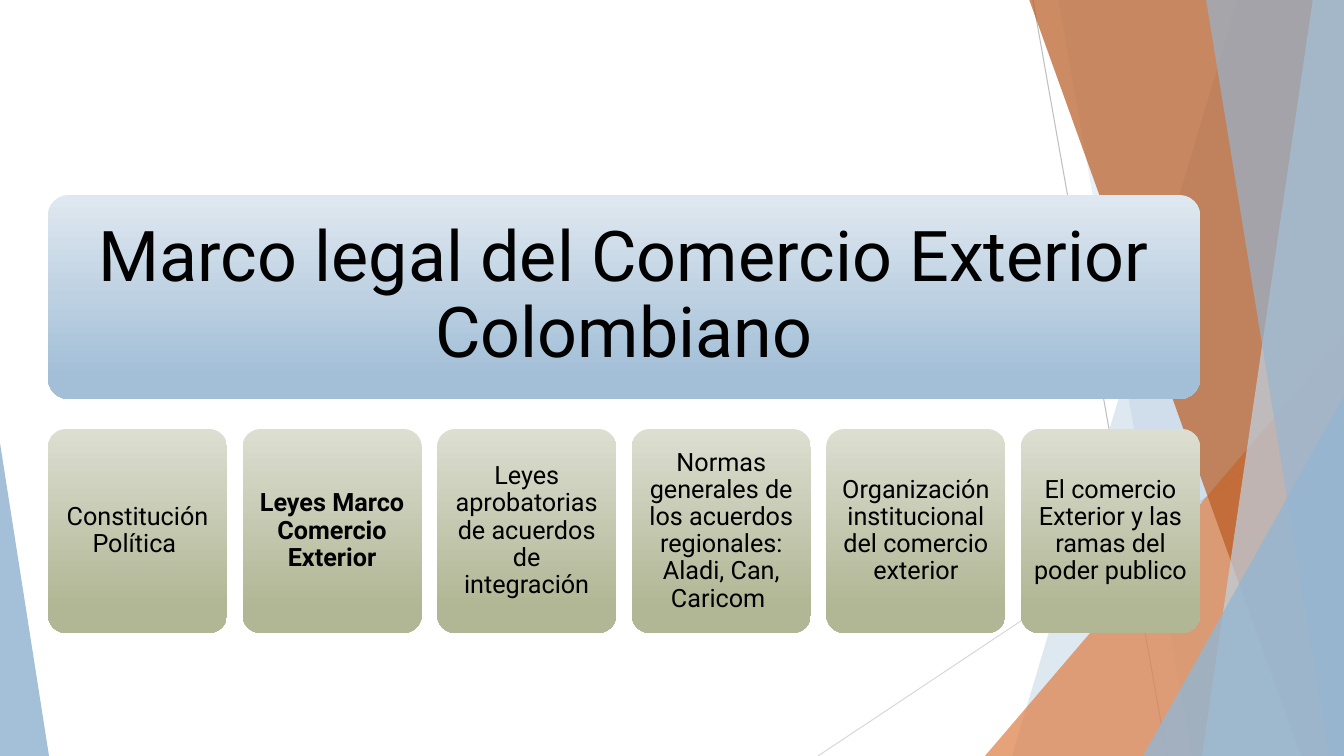
from lxml.etree import SubElement
from pptx import Presentation
from pptx.dml.color import RGBColor
from pptx.enum.shapes import MSO_CONNECTOR, MSO_SHAPE
from pptx.enum.text import MSO_ANCHOR, PP_ALIGN
from pptx.oxml.ns import qn
from pptx.util import Emu, Pt

SLIDE_WIDTH, SLIDE_HEIGHT = 1344, 756
SCALE = 914400 / 100.8

TITLE = "Marco legal del Comercio Exterior Colombiano"
TOPICS = [
    ("Constitución Política ", False),
    ("Leyes Marco Comercio Exterior", True),
    ("Leyes aprobatorias de acuerdos de integración", False),
    ("Normas generales de los acuerdos regionales: Aladi, Can, Caricom ", False),
    ("Organización institucional del comercio exterior", False),
    ("El comercio Exterior y las ramas del poder publico", False),
]

# start x, start y, end x, end y, colour
THIN_LINES = [
    (1033, 0, 1167, 756, "BFBFBF"),
    (1344, 406, 818, 756, "D9D9D9"),
]
# Back to front. band: top x, bottom x; triangle: left, top, width, apex; then colour, opacity %
FACETS = [
    ("band", (1238, 1012), "94B6D2", 30),
    ("band", (1058, 1192), "94B6D2", 20),
    ("triangle", (985, 336, 359, 1), "DD8047", 72),
    ("band", (1029, 1301), "B95B22", 70),
    ("band", (1313, 1202), "BFD3E4", 70),
    ("band", (1206, 1329), "94B6D2", 65),
    ("triangle", (1143, 396, 201, 1), "94B6D2", 80),
    ("triangle", (0, 443, 49, 0), "94B6D2", 85),
]

BLOCK_LEFT, BLOCK_WIDTH, BLOCK_HEIGHT = 48, 1152, 204
TITLE_TOP, CARD_TOP, CARD_WIDTH = 195, 429, 179
TITLE_FORMAT = {"size": Pt(50), "bold": False}
CARD_FORMAT = {"size": Pt(18)}


def px(length):
    return Emu(round(length * SCALE))


def colour(code):
    return RGBColor.from_string(code)


def add_thin_line(page, x1, y1, x2, y2, code):
    line = page.shapes.add_connector(MSO_CONNECTOR.STRAIGHT, px(x1), px(y1), px(x2), px(y2))
    line.line.width = Pt(0.75)
    line.line.color.rgb = colour(code)
    SubElement(line._element.spPr, qn("a:effectLst"))


def add_band(page, top_x, bottom_x):
    """Add a panel with a slanted left edge that reaches the right side of the slide."""
    outline = page.shapes.build_freeform(top_x, -1, SCALE)
    outline.add_line_segments(
        [(SLIDE_WIDTH, -1), (SLIDE_WIDTH, SLIDE_HEIGHT), (bottom_x, SLIDE_HEIGHT)], close=True)
    return outline.convert_to_shape()


def add_triangle(page, left, top, width, apex):
    triangle = page.shapes.add_shape(
        MSO_SHAPE.ISOSCELES_TRIANGLE, px(left), px(top), px(width), px(SLIDE_HEIGHT - top))
    triangle.adjustments[0] = apex
    return triangle


def add_facet(page, kind, geometry, code, opacity):
    facet = {"band": add_band, "triangle": add_triangle}[kind](page, *geometry)
    facet.shadow.inherit = False
    facet.line.fill.background()
    facet.fill.solid()
    facet.fill.fore_color.rgb = colour(code)
    tint = facet._element.spPr.find(qn("a:solidFill"))[0]
    SubElement(tint, qn("a:alpha"), val=str(opacity * 1000))


def add_block(page, left, top, width, text, gradient, inset, font_format):
    """Add a rounded rectangle with a downward gradient and centred text."""
    box = page.shapes.add_shape(
        MSO_SHAPE.ROUNDED_RECTANGLE, px(left), px(top), px(width), px(BLOCK_HEIGHT))
    box.adjustments[0] = 0.1
    box.shadow.inherit = False
    box.line.fill.background()
    box.fill.gradient()
    box.fill.gradient_angle = 270
    for stop, position, code in zip(box.fill.gradient_stops, (0, 0.88), gradient):
        stop.position = position
        stop.color.rgb = colour(code)

    frame = box.text_frame
    frame.word_wrap = True
    frame.vertical_anchor = MSO_ANCHOR.MIDDLE
    for side in ("left", "top", "right", "bottom"):
        setattr(frame, f"margin_{side}", px(inset))
    para = frame.paragraphs[0]
    para.alignment = PP_ALIGN.CENTER
    para.line_spacing = 0.9
    span = para.add_run()
    span.text = text
    span.font.color.rgb = colour("000000")
    for name, value in {"name": "Roboto", **font_format}.items():
        setattr(span.font, name, value)


def main():
    deck = Presentation()
    deck.slide_width, deck.slide_height = px(SLIDE_WIDTH), px(SLIDE_HEIGHT)
    page = deck.slides.add_slide(deck.slide_layouts[6])

    for thin_line in THIN_LINES:
        add_thin_line(page, *thin_line)
    for facet in FACETS:
        add_facet(page, *facet)

    add_block(page, BLOCK_LEFT, TITLE_TOP, BLOCK_WIDTH, TITLE,
              ("DFE8F0", "A3BFD7"), 21, TITLE_FORMAT)
    pitch = (BLOCK_WIDTH - CARD_WIDTH) / (len(TOPICS) - 1)
    for index, (topic, bold) in enumerate(TOPICS):
        add_block(page, BLOCK_LEFT + index * pitch, CARD_TOP, CARD_WIDTH, topic,
                  ("DCDED1", "B1B694"), 7, {**CARD_FORMAT, "bold": bold})

    deck.save("out.pptx")


if __name__ == "__main__":
    main()
